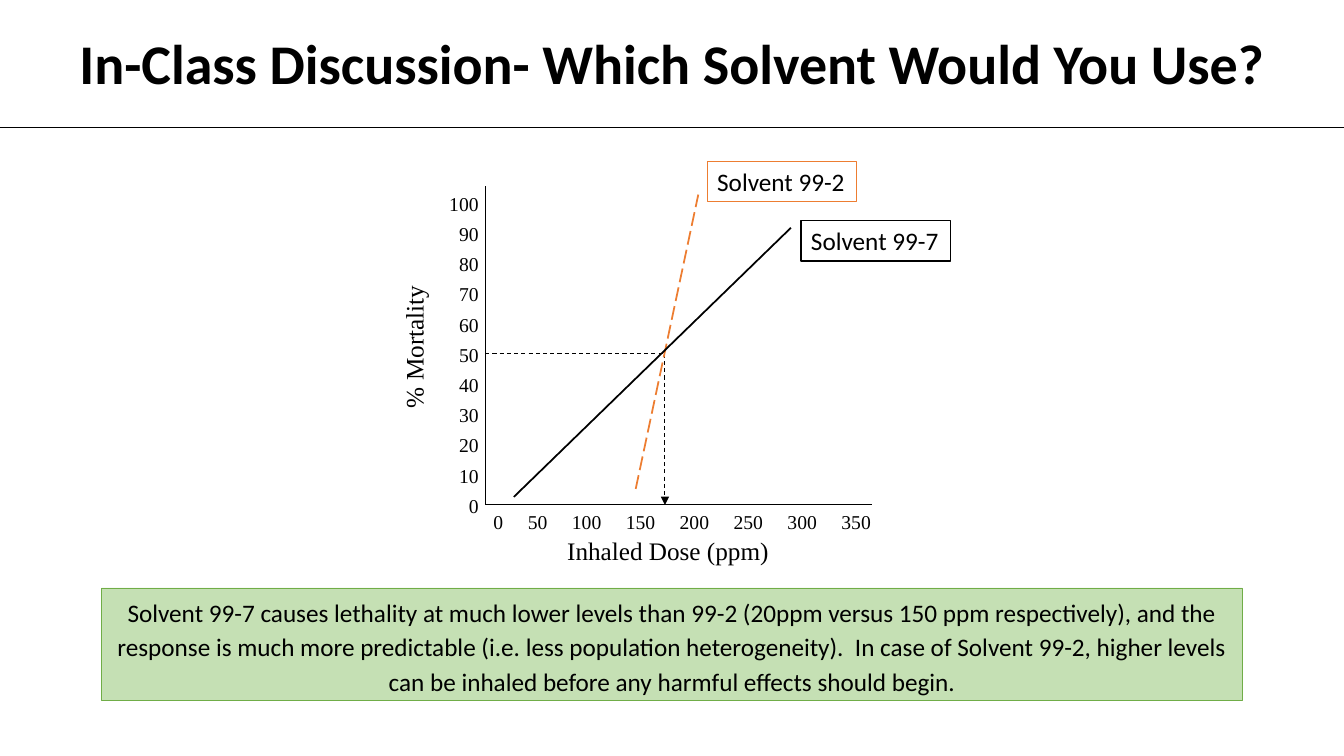
from lxml import etree
from pptx import Presentation
from pptx.dml.color import RGBColor
from pptx.enum.dml import MSO_LINE
from pptx.enum.shapes import MSO_CONNECTOR, MSO_SHAPE
from pptx.enum.text import MSO_ANCHOR, PP_ALIGN
from pptx.oxml.ns import qn
from pptx.util import Pt

BLACK = RGBColor(0x00, 0x00, 0x00)
WHITE = RGBColor(0xFF, 0xFF, 0xFF)
ORANGE = RGBColor(0xED, 0x7D, 0x31)
GREEN = RGBColor(0x70, 0xAD, 0x47)
PALE_GREEN = RGBColor(0xC5, 0xE0, 0xB4)
LEFT, CENTER, RIGHT = PP_ALIGN.LEFT, PP_ALIGN.CENTER, PP_ALIGN.RIGHT
TOP = MSO_ANCHOR.TOP
DASH, LONG_DASH = MSO_LINE.DASH, MSO_LINE.LONG_DASH
STRAIGHT, RECTANGLE = MSO_CONNECTOR.STRAIGHT, MSO_SHAPE.RECTANGLE
SANS, SERIF = "Calibri", "Times New Roman"

PAGE_WIDTH, PAGE_HEIGHT = 960, 540
POINTS_PER_PERCENT = 2.16
DIGIT_WIDTH, DOSE_GAP = 7, 17.5
DOSES = range(0, 351, 50)


def add_text(page, text, box, *, font=SANS, size=18, bold=False, align=LEFT,
             wrap=True, spacing=None, fill=None, outline=None, outline_width=1):
    """Place text in box (left, top, width, height), framed if filled."""
    lengths = [Pt(value) for value in box]
    if fill is None:
        shape = page.shapes.add_textbox(*lengths)
    else:
        shape = page.shapes.add_shape(RECTANGLE, *lengths)
        shape.shadow.inherit = False
        shape.fill.solid()
        shape.fill.fore_color.rgb = fill
        shape.line.color.rgb = outline
        shape.line.width = Pt(outline_width)
    frame = shape.text_frame
    frame.word_wrap = wrap
    frame.vertical_anchor = TOP
    para = frame.paragraphs[0]
    para.alignment = align
    if spacing:
        para.line_spacing = spacing
    span = para.add_run()
    span.text = text
    span.font.name = font
    span.font.size = Pt(size)
    span.font.bold = bold
    span.font.color.rgb = BLACK
    return shape


def add_line(page, start, end, *, color=BLACK, width=0.75, dash=None, arrow=False):
    line = page.shapes.add_connector(STRAIGHT, *[Pt(value) for value in (*start, *end)])
    line.line.color.rgb = color
    line.line.width = Pt(width)
    if dash:
        line.line.dash_style = dash
    properties = line._element.spPr
    if arrow:
        etree.SubElement(properties.find(qn("a:ln")), qn("a:tailEnd"), type="triangle")
    etree.SubElement(properties, qn("a:effectLst"))


def add_heading(page, box):
    left, top, width, height = box
    add_text(page, "In-Class Discussion- Which Solvent Would You Use?",
             (left + 44.6, top + 16.6, width - 89.2, 55.4),
             size=40, bold=True, align=CENTER, wrap=False)
    add_line(page, (left, top + height), (left + width, top + height), width=0.5)


def add_dose_scale(page, box):
    """Label the doses in one line, with equal gaps between the labels."""
    scale = add_text(page, "\t".join(str(dose) for dose in DOSES), box,
                     font=SERIF, size=14)
    properties = scale.text_frame.paragraphs[0]._p.get_or_add_pPr()
    tabs = etree.SubElement(properties, qn("a:tabLst"))
    position = 0
    for dose in DOSES[:-1]:
        position += len(str(dose)) * DIGIT_WIDTH + DOSE_GAP
        etree.SubElement(tabs, qn("a:tab"), pos=str(Pt(position)), algn="l")


def add_mortality_plot(page, box):
    left, top, width, height = box
    bottom = top + height

    def at(across, up):
        return left + across, bottom - up

    add_line(page, at(0, 0), at(0, height))
    add_line(page, at(0, 0), at(width, 0))
    for percent in range(0, 101, 10):
        add_text(page, str(percent),
                 (*at(-37.6, percent * POINTS_PER_PERCENT + 11.5), 40, 24),
                 font=SERIF, size=14, align=RIGHT)
    add_dose_scale(page, (*at(-1.2, 0), 293.8, 24.5))

    add_text(page, "Inhaled Dose (ppm)", (*at(50.6, -18), 159.8, 28.8),
             font=SERIF, align=CENTER, wrap=False)
    mortality = add_text(page, "% Mortality", (*at(-102.7, 127.4), 103, 28.8),
                         font=SERIF, align=CENTER, wrap=False)
    mortality.rotation = 270

    median = at(128.4, 50 * POINTS_PER_PERCENT)
    add_line(page, at(0, 50 * POINTS_PER_PERCENT), median, dash=DASH)
    add_line(page, median, at(128.4, 0), dash=DASH, arrow=True)

    solvents = (
        ("Solvent 99-2", (107.5, 11.5), (152.2, 221.7), (158.6, 245.5), ORANGE, LONG_DASH),
        ("Solvent 99-7", (20.4, 5.7), (218.4, 198), (225.6, 203), BLACK, None),
    )
    for name, start, end, corner, color, dash in solvents:
        add_line(page, at(*start), at(*end), color=color, width=1.25, dash=dash)
        add_text(page, name, (*at(*corner), 106.6, 28.8), wrap=False,
                 fill=WHITE, outline=color)


def add_conclusion(page, box):
    add_text(page,
             "Solvent 99-7 causes lethality at much lower levels than 99-2 (20ppm versus "
             "150 ppm respectively), and the response is much more predictable (i.e. less "
             "population heterogeneity).  In case of Solvent 99-2, higher levels can be "
             "inhaled before any harmful effects should begin.",
             box, align=CENTER, spacing=1.14, fill=PALE_GREEN, outline=GREEN,
             outline_width=0.5)


def main():
    deck = Presentation()
    deck.slide_width, deck.slide_height = Pt(PAGE_WIDTH), Pt(PAGE_HEIGHT)
    page = deck.slides.add_slide(deck.slide_layouts[6])
    add_heading(page, (0, 0, PAGE_WIDTH, 90.9))
    add_mortality_plot(page, (346.6, 133.2, 276, 227.5))
    add_conclusion(page, (72.5, 420, 815, 80.5))
    deck.save("out.pptx")


if __name__ == "__main__":
    main()
